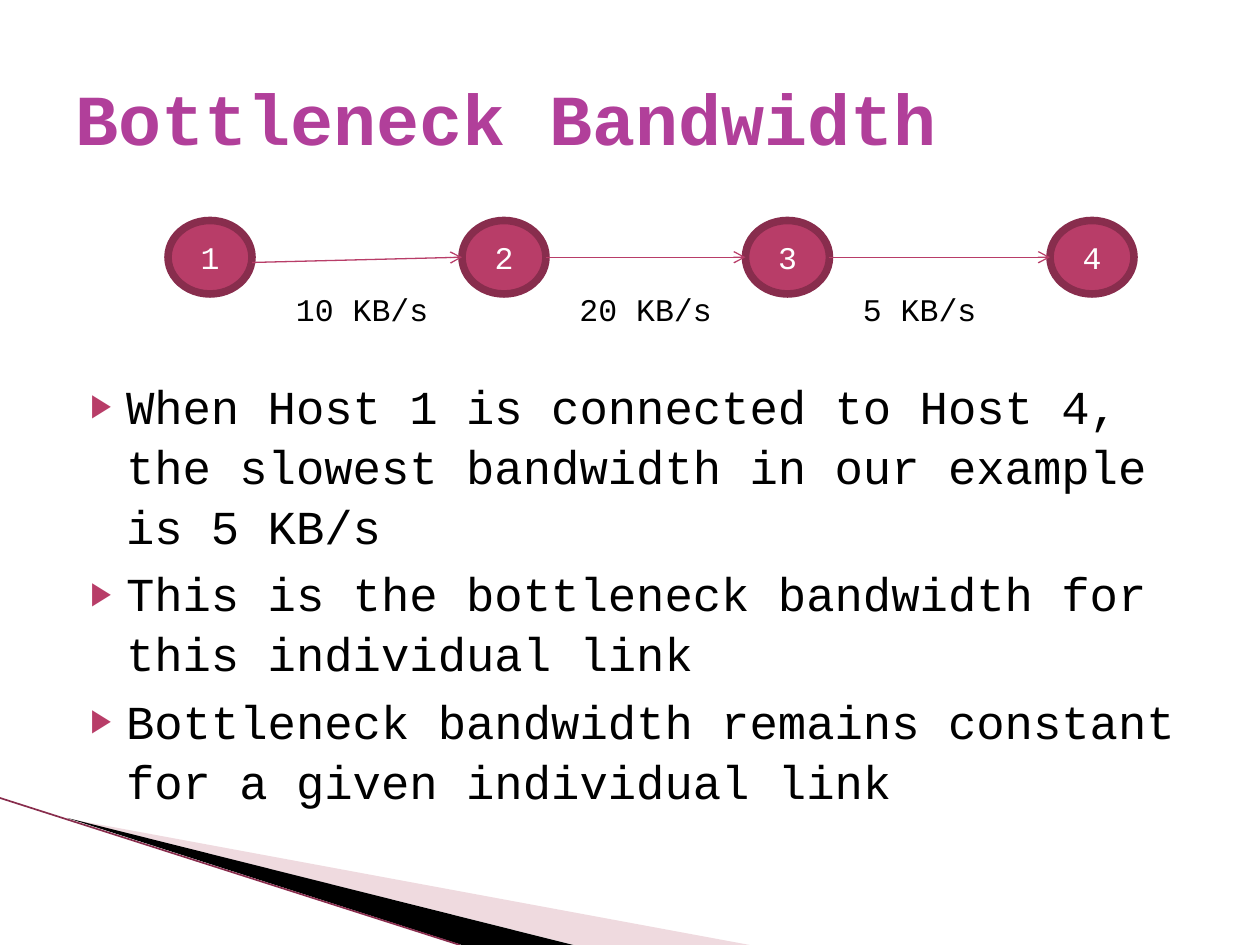
from dataclasses import dataclass
from lxml import etree
from pptx import Presentation
from pptx.dml.color import RGBColor
from pptx.enum.shapes import MSO_CONNECTOR, MSO_SHAPE
from pptx.enum.text import MSO_ANCHOR, MSO_AUTO_SIZE, PP_ALIGN
from pptx.oxml.ns import qn
from pptx.util import Pt

PX = 7620
LINE = MSO_CONNECTOR.STRAIGHT
OVAL = MSO_SHAPE.OVAL
MID, TOP = MSO_ANCHOR.MIDDLE, MSO_ANCHOR.TOP
LEFT, MIDST = PP_ALIGN.LEFT, PP_ALIGN.CENTER
FIXED = MSO_AUTO_SIZE.NONE


@dataclass(frozen=True)
class Theme:
    font: str = "Courier New"
    head: str = "B13F9A"
    ink: str = "000000"
    paper: str = "FFFFFF"
    rose: str = "B83D68"
    dark: str = "882D4D"
    pale: str = "D8A3AF"
    big: int = 41
    body: int = 27
    small: int = 18


@dataclass(frozen=True)
class Box:
    x: int
    y: int
    w: int
    h: int


@dataclass(frozen=True)
class Host:
    name: str
    x: int


@dataclass(frozen=True)
class Link:
    rate: str
    x: int
    drop: int = 0


@dataclass(frozen=True)
class Wedge:
    points: tuple
    color: str
    alpha: int = 100


LOOK = Theme()
HOSTS = (Host("1", 160), Host("2", 440), Host("3", 710), Host("4", 1000))
LINKS = (Link("10 KB/s", 270, 5), Link("20 KB/s", 540), Link("5 KB/s", 810))
HOST_Y, HOST_W, HOST_H = 210, 80, 70
WEDGES = (
    Wedge(((66, 780), (714, 900), (547, 900)), LOOK.pale, 40),
    Wedge(((64, 779), (546, 900), (440, 900)), LOOK.ink),
)
POINTS = (
    "When Host 1 is connected to Host 4, the slowest bandwidth in our example is 5 KB/s",
    "This is the bottleneck bandwidth for this individual link",
    "Bottleneck bandwidth remains constant for a given individual link",
)


def rgb(color: str) -> RGBColor:
    return RGBColor.from_string(color)


def place(shape, box: Box) -> None:
    shape.left, shape.top = box.x * PX, box.y * PX
    shape.width, shape.height = box.w * PX, box.h * PX


def write(para, text: str, size: int, color: str, align=LEFT, bold=False) -> None:
    para.alignment = align
    run = para.add_run()
    run.text = text
    run.font.name = LOOK.font
    run.font.size = Pt(size)
    run.font.bold = bold
    run.font.color.rgb = rgb(color)


def bullet(para) -> None:
    props = para._p.get_or_add_pPr()
    props.set("marL", str(48 * PX))
    props.set("indent", str(-34 * PX))
    tint = etree.SubElement(props, qn("a:buClr"))
    etree.SubElement(tint, qn("a:srgbClr"), val=LOOK.rose)
    etree.SubElement(props, qn("a:buSzPct"), val="68000")
    etree.SubElement(props, qn("a:buChar"), char="▶")


def draw_wedge(slide, wedge: Wedge) -> None:
    first, *rest = wedge.points
    pen = slide.shapes.build_freeform(*first, scale=PX)
    pen.add_line_segments(rest, close=True)
    shape = pen.convert_to_shape()
    shape.shadow.inherit = False
    shape.line.fill.background()
    shape.fill.solid()
    shape.fill.fore_color.rgb = rgb(wedge.color)
    if wedge.alpha < 100:
        tint = shape._element.spPr.find(qn("a:solidFill"))[0]
        etree.SubElement(tint, qn("a:alpha"), val=str(wedge.alpha * 1000))


def draw_line(slide, start: tuple, end: tuple, color: str, width: float, arrow=False) -> None:
    ends = [side * PX for side in (*start, *end)]
    line = slide.shapes.add_connector(LINE, *ends)
    line.line.color.rgb = rgb(color)
    line.line.width = Pt(width)
    if arrow:
        etree.SubElement(line.line._get_or_add_ln(), qn("a:tailEnd"), type="arrow")
    etree.SubElement(line._element.spPr, qn("a:effectLst"))


def draw_host(slide, host: Host) -> None:
    shape = slide.shapes.add_shape(OVAL, 0, 0, 0, 0)
    place(shape, Box(host.x, HOST_Y, HOST_W, HOST_H))
    shape.shadow.inherit = False
    shape.fill.solid()
    shape.fill.fore_color.rgb = rgb(LOOK.rose)
    shape.line.color.rgb = rgb(LOOK.dark)
    shape.line.width = Pt(4.33)
    frame = shape.text_frame
    frame.vertical_anchor = MID
    write(frame.paragraphs[0], host.name, LOOK.small, LOOK.paper, MIDST)


def draw_link(slide, link: Link, left: Host, right: Host) -> None:
    y = HOST_Y + HOST_H // 2
    draw_line(slide, (left.x + HOST_W, y + link.drop), (right.x, y), LOOK.rose, 0.75, True)
    label = slide.shapes.add_textbox(0, 0, 0, 0)
    place(label, Box(link.x, 270, 150, 48))
    frame = label.text_frame
    frame.word_wrap = True
    frame.margin_right = 0
    write(frame.paragraphs[0], link.rate, LOOK.small, LOOK.ink)


def fill_title(title) -> None:
    place(title, Box(60, 36, 1080, 150))
    frame = title.text_frame
    frame.auto_size = FIXED
    frame.vertical_anchor = MID
    write(frame.paragraphs[0], "Bottleneck Bandwidth", LOOK.big, LOOK.head, bold=True)


def fill_body(body) -> None:
    place(body, Box(60, 350, 1080, 438))
    frame = body.text_frame
    frame.auto_size = FIXED
    frame.vertical_anchor = TOP
    for rank, text in enumerate(POINTS):
        para = frame.add_paragraph() if rank else frame.paragraphs[0]
        bullet(para)
        para.space_before = Pt(4 if rank else 0)
        para.line_spacing = 1.06
        write(para, text, LOOK.body, LOOK.ink)


def main() -> None:
    deck = Presentation()
    deck.slide_width, deck.slide_height = 1200 * PX, 900 * PX
    slide = deck.slides.add_slide(deck.slide_layouts[1])
    for wedge in WEDGES:
        draw_wedge(slide, wedge)
    draw_line(slide, (0, 760), (438, 900), LOOK.dark, 0.95)
    fill_title(slide.shapes.title)
    fill_body(slide.placeholders[1])
    for host in HOSTS:
        draw_host(slide, host)
    for link, left, right in zip(LINKS, HOSTS, HOSTS[1:]):
        draw_link(slide, link, left, right)
    deck.save("out.pptx")


if __name__ == "__main__":
    main()
